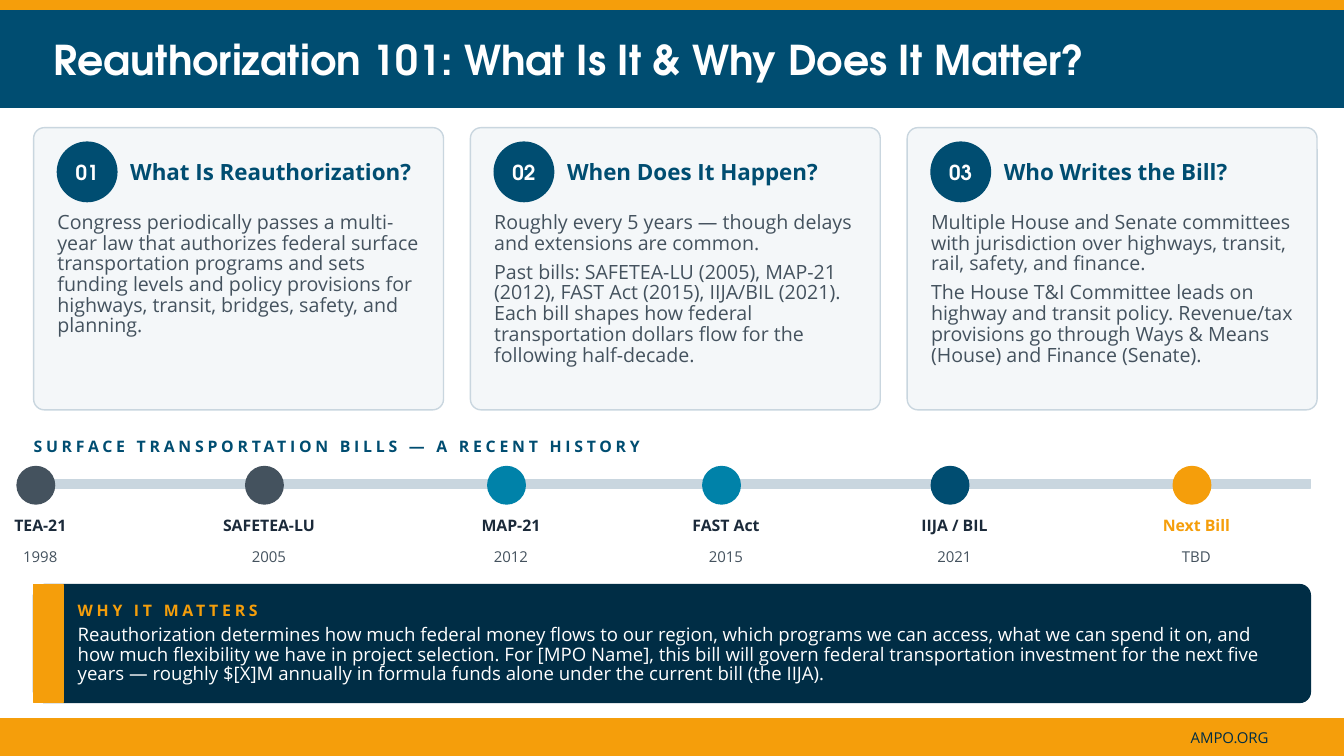
from pptx import Presentation
from pptx.dml.color import RGBColor
from pptx.enum.shapes import MSO_SHAPE
from pptx.enum.text import MSO_ANCHOR, MSO_AUTO_SIZE, PP_ALIGN
from pptx.util import Pt

NAVY, BLUE, TEAL, AMBER = "002D45", "004D71", "0082A9", "F59E0B"
INK, SLATE, MIST, PALE, WHITE = "1B2A3A", "44525E", "C9D6DF", "F4F7F9", "FFFFFF"
BODY, HEAD = "Open Sans", "TeX Gyre Adventor"
RECT, ROUND, OVAL = MSO_SHAPE.RECTANGLE, MSO_SHAPE.ROUNDED_RECTANGLE, MSO_SHAPE.OVAL
LEFT, MID = PP_ALIGN.LEFT, PP_ALIGN.CENTER

deck = Presentation()
deck.slide_width, deck.slide_height = Pt(960), Pt(540)
slide = deck.slides.add_slide(deck.slide_layouts[5])
shapes = slide.shapes


def put(x, y, w, h, fill=None, kind=RECT, line=None):
    """Add a filled shape, or a text box when no fill is given."""
    area = Pt(x), Pt(y), Pt(w), Pt(h)
    if fill is None:
        return shapes.add_textbox(*area)
    shape = shapes.add_shape(kind, *area)
    shape.shadow.inherit = False
    shape.fill.solid()
    shape.fill.fore_color.rgb = RGBColor.from_string(fill)
    shape.line.color.rgb = RGBColor.from_string(line or fill)
    shape.line.width = Pt(1)
    return shape


def write(shape, lines, size, color, bold=False, face=BODY, align=LEFT,
          anchor=MSO_ANCHOR.MIDDLE, track=0, lead=None):
    """Fill a shape with paragraphs; track is letter spacing in points."""
    frame = shape.text_frame
    frame.word_wrap = True
    frame.auto_size = MSO_AUTO_SIZE.NONE
    frame.vertical_anchor = anchor
    frame.margin_left = frame.margin_right = 0
    frame.margin_top = frame.margin_bottom = 0
    frame.text = "\n".join(lines)
    for para in frame.paragraphs:
        para.alignment = align
        para.line_spacing = lead
        para.font.name, para.font.size, para.font.bold = face, Pt(size), bold
        para.font.color.rgb = RGBColor.from_string(color)
        if track:
            para.runs[0]._r.get_or_add_rPr().set("spc", str(round(track * 100)))
    for para in frame.paragraphs[:-1]:
        para.space_after = Pt(6)


# Header
put(0, 0, 960, 7.7, AMBER)
band = put(0, 7.7, 960, 69.1, BLUE)
title = shapes.title
band.element.addnext(title.element)
title.left, title.top, title.width, title.height = Pt(38.4), Pt(7.7), Pt(883.2), Pt(69.1)
write(title, ["Reauthorization 101: What Is It & Why Does It Matter?"],
      29.3, WHITE, True, HEAD)

# Cards
cards = [
    ("What Is Reauthorization?", [
        "Congress periodically passes a multi-year law that authorizes federal surface "
        "transportation programs and sets funding levels and policy provisions for "
        "highways, transit, bridges, safety, and planning."]),
    ("When Does It Happen?", [
        "Roughly every 5 years — though delays and extensions are common.",
        "Past bills: SAFETEA-LU (2005), MAP-21 (2012), FAST Act (2015), IIJA/BIL (2021). "
        "Each bill shapes how federal transportation dollars flow for the following "
        "half-decade."]),
    ("Who Writes the Bill?", [
        "Multiple House and Senate committees with jurisdiction over highways, transit, "
        "rail, safety, and finance.",
        "The House T&I Committee leads on highway and transit policy. Revenue/tax "
        "provisions go through Ways & Means (House) and Finance (Senate)."]),
]
for i, (head, lines) in enumerate(cards):
    x = 24 + 312 * i
    card = put(x, 91.2, 292.8, 201.6, PALE, ROUND, MIST)
    card.adjustments[0] = 0.038
    badge = put(x + 17, 101.5, 42.5, 42.5, BLUE, OVAL)
    write(badge, [f"{i + 1:02}"], 14.7, WHITE, True, HEAD, MID)
    write(put(x + 69, 101.5, 209.5, 42.5), [head], 16, BLUE, True)
    write(put(x + 17, 152, 261.5, 132), lines, 14, SLATE,
          anchor=MSO_ANCHOR.TOP, lead=0.88)

# Timeline
write(put(24, 305.3, 912, 26.6), ["SURFACE TRANSPORTATION BILLS — A RECENT HISTORY"],
      11.3, BLUE, True, track=2.7)
put(24, 342.7, 912, 6, MIST)
bills = [
    (12.2, "TEA-21", "1998", SLATE, INK),
    (175.5, "SAFETEA-LU", "2005", SLATE, INK),
    (348.4, "MAP-21", "2012", TEAL, INK),
    (502, "FAST Act", "2015", TEAL, INK),
    (665.2, "IIJA / BIL", "2021", BLUE, INK),
    (838, "Next Bill", "TBD", AMBER, AMBER),
]
for x, name, year, dot, color in bills:
    put(x, 333.2, 26.8, 26.8, dot, OVAL)
    write(put(x - 36.3, 363, 105.8, 23.8), [name], 11.3, color, True, align=MID)
    write(put(x - 36.3, 386.8, 105.8, 20.9), [year], 10.7, SLATE, align=MID)

# Why it matters
panel = put(24, 417.6, 912, 84.2, NAVY, ROUND)
panel.adjustments[0] = 0.091
put(24, 417.6, 20.9, 84.2, AMBER)
write(put(55.5, 424, 864, 23), ["WHY IT MATTERS"], 11.3, AMBER, True, track=2.7)
write(put(55.5, 447, 864, 46), [
    "Reauthorization determines how much federal money flows to our region, which "
    "programs we can access, what we can spend it on, and how much flexibility we have "
    "in project selection. For [MPO Name], this bill will govern federal transportation "
    "investment for the next five years — roughly $[X]M annually in formula funds alone "
    "under the current bill (the IIJA)."],
    13.3, WHITE, anchor=MSO_ANCHOR.TOP, lead=0.88)

# Footer
put(0, 513.5, 960, 26, AMBER)
write(put(816, 513.5, 124.6, 26), ["AMPO.ORG"], 10.7, NAVY, align=MID)

deck.save("out.pptx")
